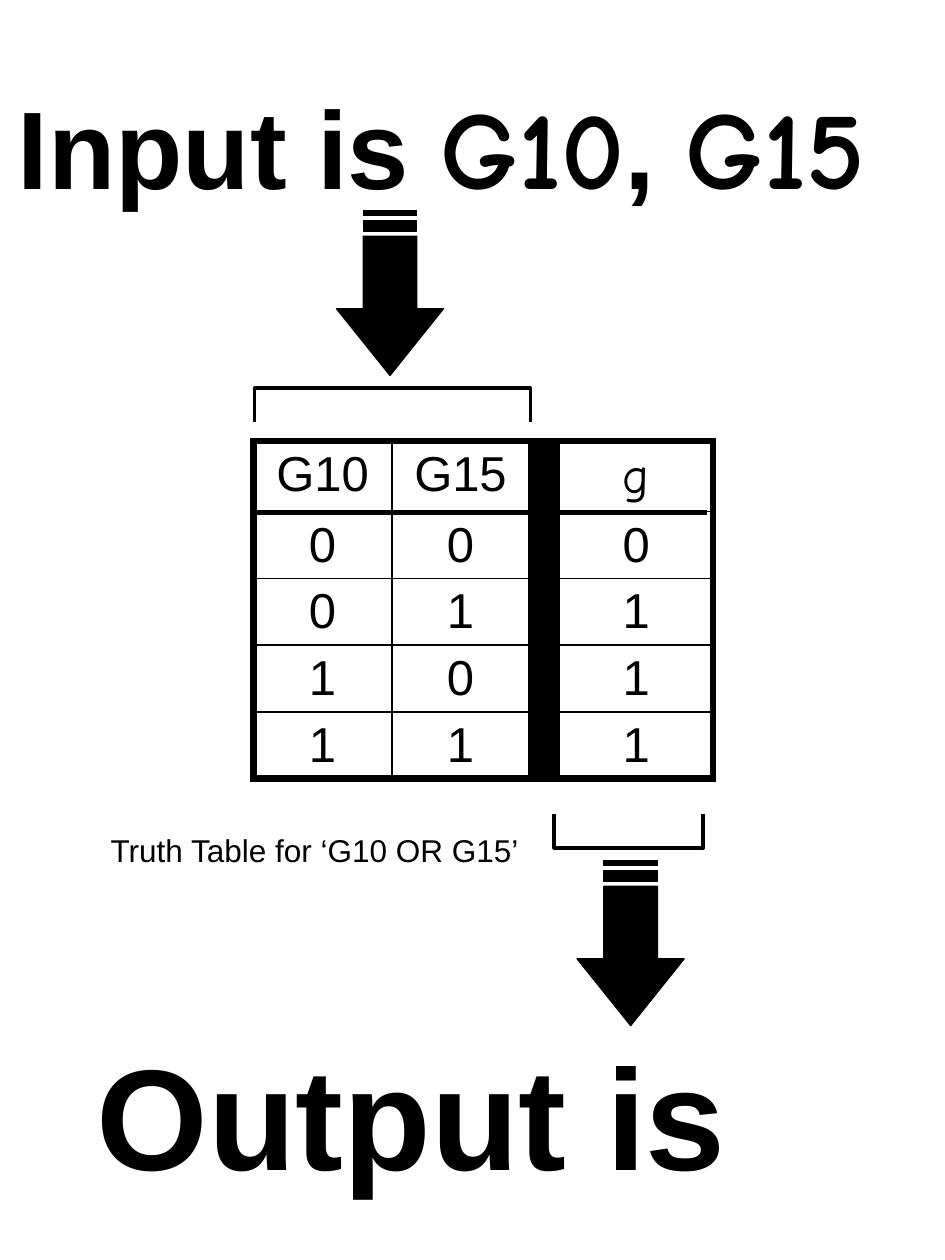
from lxml import etree
from pptx import Presentation
from pptx.dml.color import RGBColor
from pptx.enum.shapes import MSO_CONNECTOR
from pptx.enum.text import MSO_ANCHOR, MSO_AUTO_SIZE, PP_ALIGN
from pptx.oxml.ns import qn
from pptx.util import Inches, Pt

LEFT, CENTER = PP_ALIGN.LEFT, PP_ALIGN.CENTER
TOP = MSO_ANCHOR.TOP
GROW = MSO_AUTO_SIZE.SHAPE_TO_FIT_TEXT
STRAIGHT = MSO_CONNECTOR.STRAIGHT

COLORS = {"ink": "000000"}
INK = RGBColor.from_string(COLORS["ink"])
SANS, HAND = "Arial", "Comic Neue"

# Content: runs are (text, size, font)
INPUT_RUNS = [("Input is ", 63, SANS), ("G10", 63, HAND), (", ", 63, SANS), ("G15", 63, HAND)]
OUTPUT_RUNS = [("Output is", 82, SANS)]
CAPTION_RUNS = [("Truth Table for ‘G10 OR G15’", 18, SANS)]
TRUTH_TABLE = [
    ("G10", "G15", "", "g"),
    ("0", "0", "", "0"),
    ("0", "1", "", "1"),
    ("1", "0", "", "1"),
    ("1", "1", "", "1"),
]
DIVIDER_COLUMN = 2
COLUMN_WIDTHS = [1.1, 1.09, 0.23, 1.22]
ROW_HEIGHTS = [0.56] + [0.53] * 4
TABLE_LEFT, TABLE_TOP = 2.01, 3.5
THICK, THIN = 4.5, 1

# Geometry
ARROW_LENGTH, ARROW_WIDTH, HEAD_LENGTH = 1.31, 0.85, 0.53
ARROWS = [(2.44, 1.9), (4.35, 7.06)]
BRACKETS = [  # left, right, end of the arms, bar
    (2.02, 4.21, 3.35, 3.08),
    (4.4, 5.58, 6.46, 6.73),
]


def fill_text(shape, runs, bold=False, wrap=False):
    frame = shape.text_frame
    frame.word_wrap = wrap
    frame.auto_size = GROW
    frame.vertical_anchor = TOP
    paragraph = frame.paragraphs[0]
    paragraph.alignment = LEFT
    paragraph.line_spacing = 1.0
    paragraph.space_before = Pt(0)
    for text, size, font in runs:
        run = paragraph.add_run()
        run.text = text
        run.font.size, run.font.name, run.font.bold = Pt(size), font, bold
        run.font.color.rgb = INK


def add_text(slide, box, runs, bold=False, wrap=False):
    fill_text(slide.shapes.add_textbox(*map(Inches, box)), runs, bold, wrap)


def add_outline(slide, contours, line_width, closed):
    start, *rest = contours[0]
    builder = slide.shapes.build_freeform(Inches(start[0]), Inches(start[1]))
    builder.add_line_segments([(Inches(x), Inches(y)) for x, y in rest], close=closed)
    for start, *rest in contours[1:]:
        builder.move_to(Inches(start[0]), Inches(start[1]))
        builder.add_line_segments([(Inches(x), Inches(y)) for x, y in rest], close=closed)
    outline = builder.convert_to_shape()
    outline.shadow.inherit = False
    if closed:
        outline.fill.solid()
        outline.fill.fore_color.rgb = INK
    else:
        outline.fill.background()
    outline.line.color.rgb = INK
    outline.line.width = Pt(line_width)
    return outline


def add_striped_arrow(slide, left, top):
    """A right arrow with two tail stripes, turned to point down."""
    unit = ARROW_LENGTH / 32
    neck = left + ARROW_LENGTH - HEAD_LENGTH
    upper, lower = top + ARROW_WIDTH / 4, top + ARROW_WIDTH * 3 / 4
    body = left + 5 * unit
    contours = [[
        (neck, top), (neck, upper), (body, upper), (body, lower), (neck, lower),
        (neck, top + ARROW_WIDTH), (left + ARROW_LENGTH, top + ARROW_WIDTH / 2),
    ]]
    for first, last in [(2, 4), (0, 1)]:
        x1, x2 = left + first * unit, left + last * unit
        contours.append([(x1, upper), (x1, lower), (x2, lower), (x2, upper)])
    add_outline(slide, contours, 0.75, True).rotation = 90


def set_border(cell, side, width):
    border = etree.SubElement(cell._tc.get_or_add_tcPr(), qn("a:ln" + side), w=str(Pt(width)))
    solid = etree.SubElement(border, qn("a:solidFill"))
    etree.SubElement(solid, qn("a:srgbClr"), val=COLORS["ink"])


def add_truth_table(slide):
    rows, columns = len(ROW_HEIGHTS), len(COLUMN_WIDTHS)
    table = slide.shapes.add_table(
        rows, columns, Inches(TABLE_LEFT), Inches(TABLE_TOP),
        Inches(sum(COLUMN_WIDTHS)), Inches(sum(ROW_HEIGHTS))).table
    table.first_row = table.horz_banding = False
    for column, width in zip(table.columns, COLUMN_WIDTHS):
        column.width = Inches(width)
    for row, height in zip(table.rows, ROW_HEIGHTS):
        row.height = Inches(height)
    for r, values in enumerate(TRUTH_TABLE):
        for c, value in enumerate(values):
            cell = table.cell(r, c)
            cell.margin_top, cell.margin_bottom = Inches(0.05), Inches(0.01)
            outer = {"L": c == 0, "R": c == columns - 1, "T": r == 0, "B": r == rows - 1}
            for side, is_outer in outer.items():
                set_border(cell, side, THICK if is_outer else THIN)
            if c == DIVIDER_COLUMN:
                cell.fill.solid()
                cell.fill.fore_color.rgb = INK
            else:
                cell.fill.background()
            cell.text = value
            paragraph = cell.text_frame.paragraphs[0]
            paragraph.alignment = CENTER
            is_function = value == "g"
            paragraph.font.size = Pt(29 if is_function else 28)
            paragraph.font.name = HAND if is_function else SANS
            paragraph.font.color.rgb = INK


def main():
    deck = Presentation()
    deck.slide_width, deck.slide_height = Inches(7.5), Inches(10)
    slide = deck.slides.add_slide(deck.slide_layouts[5])

    # Input heading
    heading = slide.shapes.title
    heading.left, heading.top = Inches(0.04), Inches(0.58)
    heading.width, heading.height = Inches(7.37), Inches(1.15)
    fill_text(heading, INPUT_RUNS, bold=True)

    # Truth table and caption
    add_truth_table(slide)
    add_text(slide, (0.78, 6.55, 3.48, 0.4), CAPTION_RUNS)

    # Arrows and brackets for input and output
    for arrow, (left, right, arms, bar) in zip(ARROWS, BRACKETS):
        add_striped_arrow(slide, *arrow)
        add_outline(slide, [[(left, arms), (left, bar), (right, bar), (right, arms)]], 2.25, False)

    # Output heading
    add_text(slide, (0.67, 8.1, 6.1, 1.47), OUTPUT_RUNS, bold=True, wrap=True)

    # Rule below the table header
    rule = slide.shapes.add_connector(
        STRAIGHT, Inches(TABLE_LEFT), Inches(4.07), Inches(5.61), Inches(4.07))
    rule.line.color.rgb = INK
    rule.line.width = Pt(3)
    etree.SubElement(rule._element.spPr, qn("a:effectLst"))

    deck.save("out.pptx")


if __name__ == "__main__":
    main()
